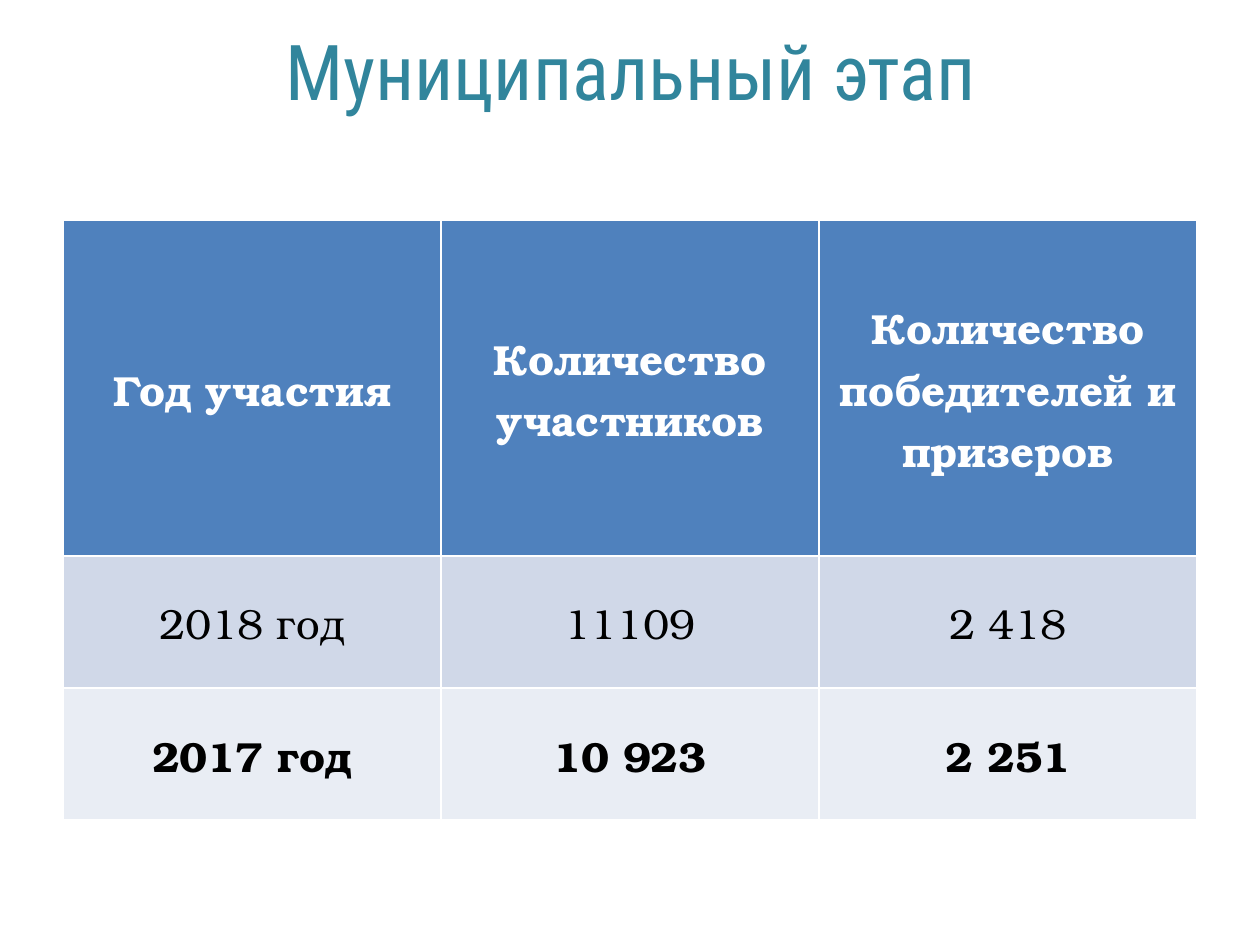
from dataclasses import dataclass
from typing import Any, NamedTuple

from pptx import Presentation
from pptx.dml.color import RGBColor
from pptx.enum.text import MSO_ANCHOR, MSO_AUTO_SIZE, PP_ALIGN
from pptx.util import Inches, Pt

WIDE, HIGH = Inches(10), Inches(7.5)


@dataclass(frozen=True)
class Theme:
    teal: str = "31859C"
    blue: str = "4F81BD"
    mid: str = "D0D8E8"
    pale: str = "E9EDF4"
    white: str = "FFFFFF"
    black: str = "000000"
    head: str = "Roboto Condensed"
    body: str = "TeX Gyre Bonum"
    large: int = 44
    small: int = 24


class Box(NamedTuple):
    left: float
    top: float
    width: float
    height: float

    def place(self) -> tuple[int, ...]:
        return tuple(round(part * side) for part, side in zip(self, (WIDE, HIGH) * 2))


class Row(NamedTuple):
    texts: tuple[str, ...]
    share: float
    fill: str
    ink: str
    bold: bool


THEME = Theme()
TITLE = Box(0.051, -0.004, 0.899, 0.167)
GRID = Box(0.05, 0.233, 0.9, 0.635)
ROWS = (
    Row(("Год участия", "Количество участников", "Количество победителей и призеров"),
        0.56, THEME.blue, THEME.white, True),
    Row(("2018 год", "11109", "2 418"), 0.22, THEME.mid, THEME.black, False),
    Row(("2017 год", "10 923", "2 251"), 0.22, THEME.pale, THEME.black, True),
)


def apply(target: Any, values: dict[str, Any]) -> None:
    for name, value in values.items():
        setattr(target, name, value)


def style(frame: Any, face: str, size: int, ink: str, bold: bool) -> None:
    para = frame.paragraphs[0]
    para.alignment = PP_ALIGN.CENTER
    font = para.runs[0].font
    apply(font, {"name": face, "size": Pt(size), "bold": bold})
    font.color.rgb = RGBColor.from_string(ink)


def draw_title(slide: Any, text: str) -> None:
    title = slide.shapes.title
    apply(title, dict(zip(("left", "top", "width", "height"), TITLE.place())))
    frame = title.text_frame
    frame.text = text
    apply(frame, {"vertical_anchor": MSO_ANCHOR.MIDDLE, "word_wrap": True,
                  "auto_size": MSO_AUTO_SIZE.NONE})
    frame.paragraphs[0].line_spacing = 0.9
    style(frame, THEME.head, THEME.large, THEME.teal, False)


def draw_table(slide: Any, rows: tuple[Row, ...]) -> None:
    place = GRID.place()
    table = slide.shapes.add_table(len(rows), len(rows[0].texts), *place).table
    for line, row in zip(table.rows, rows):
        line.height = round(place[3] * row.share)
        for cell, text in zip(line.cells, row.texts):
            apply(cell, {"text": text, "vertical_anchor": MSO_ANCHOR.MIDDLE})
            cell.fill.solid()
            cell.fill.fore_color.rgb = RGBColor.from_string(row.fill)
            style(cell.text_frame, THEME.body, THEME.small, row.ink, row.bold)


def main() -> None:
    deck = Presentation()
    apply(deck, {"slide_width": WIDE, "slide_height": HIGH})
    slide = deck.slides.add_slide(deck.slide_layouts[5])
    draw_table(slide, ROWS)
    draw_title(slide, "Муниципальный этап")
    deck.save("out.pptx")


if __name__ == "__main__":
    main()
